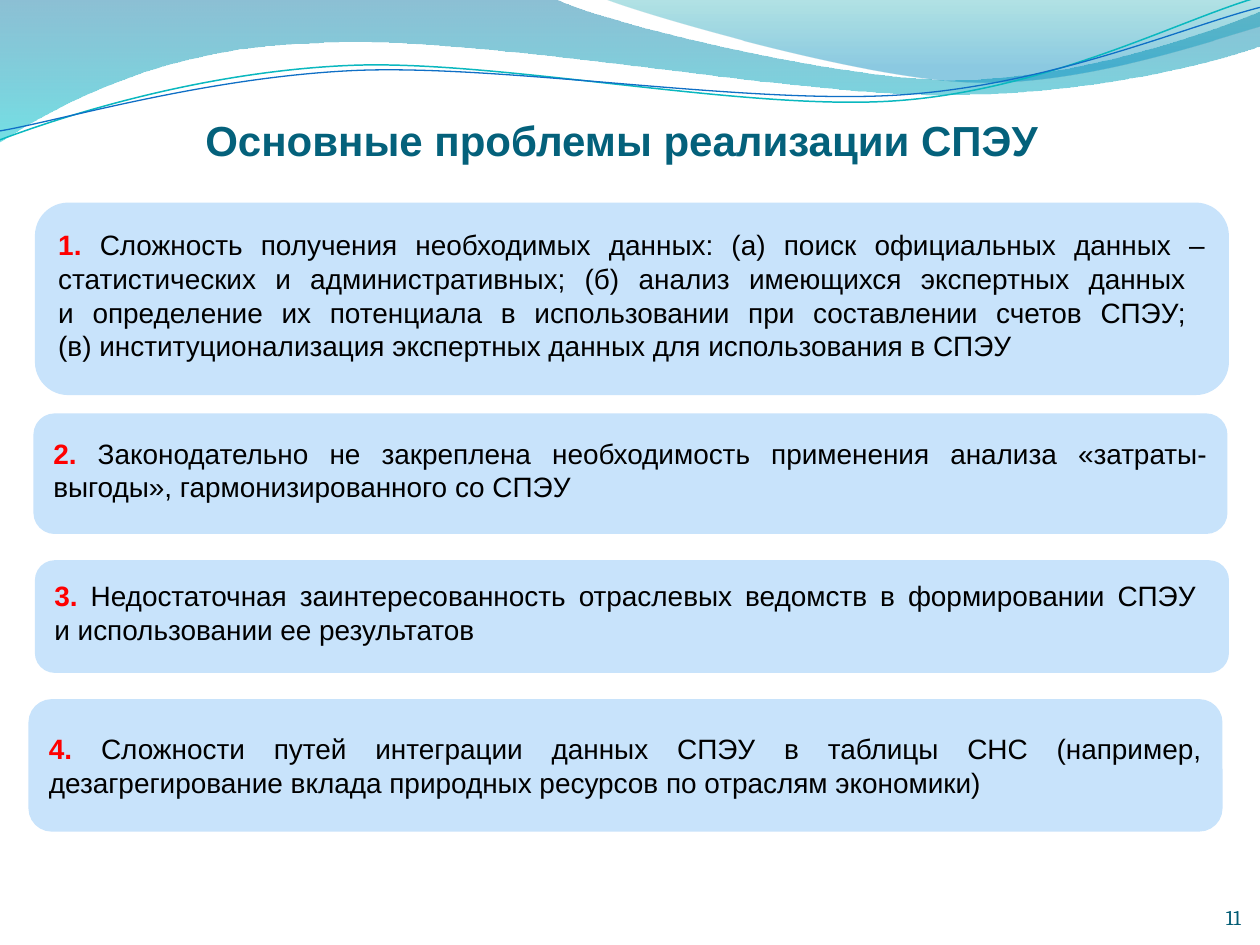
from lxml import etree
from pptx import Presentation
from pptx.dml.color import RGBColor
from pptx.enum.shapes import MSO_SHAPE
from pptx.enum.text import MSO_ANCHOR, MSO_AUTO_SIZE, PP_ALIGN
from pptx.oxml.ns import qn
from pptx.util import Cm, Pt

ROUNDED = MSO_SHAPE.ROUNDED_RECTANGLE
MIDDLE, BOTTOM = MSO_ANCHOR.MIDDLE, MSO_ANCHOR.BOTTOM
CENTER, RIGHT, JUSTIFY = PP_ALIGN.CENTER, PP_ALIGN.RIGHT, PP_ALIGN.JUSTIFY
NO_AUTOFIT = MSO_AUTO_SIZE.NONE
TITLE_ONLY_LAYOUT = 5
CARD_WIDTH = 24

COLORS = {
    "title": "04617B",
    "page": "045D75",
    "card": "C8E3FB",
    "number": "FF0000",
    "text": "000000",
    "teal_line": "0AB8BF",
    "blue_line": "0F6FC6",
    "deep_blue": "0074A1",
    "cyan": "00C6CF",
    "teal": "00A1A9",
    "blue": "008BBF",
}

LEFT_WAVE = [
    [(0, 0)], [(11.18, -0.03)],
    [(12.09, 0.43), (16.87, 1.6), (19.25, 1.6)],
    [(21.67, 1.6), (24.33, 0.66), (25.4, 0.23)],
    [(25.43, 0.91)],
    [(24.97, 1.12), (22.1, 1.93), (18.95, 1.91)],
    [(15.8, 1.91), (9.7, 0.71), (6.53, 0.86)],
    [(3.28, 0.91), (1.17, 2.11), (-0.03, 2.87)],
]
RIGHT_WAVE = [
    [(12.17, -0.03)],
    [(12.93, 0.28), (17.32, 1.57), (19.53, 1.65)],
    [(21.74, 1.75), (24.41, 0.81), (25.4, 0.53)],
    [(25.4, 0)],
]
TEAL_CURVE = [
    [(0, 2.82)],
    [(1.22, 2.36), (4.01, 1.45), (7.04, 1.32)],
    [(10.03, 1.19), (15.06, 2.26), (18.11, 2.03)],
    [(21.16, 1.8), (23.83, 0.38), (25.35, -0.05)],
]
BLUE_CURVE = [
    [(0, 2.64)],
    [(1.19, 2.44), (4.17, 1.55), (7.19, 1.42)],
    [(10.24, 1.3), (15.16, 2.13), (18.21, 1.91)],
    [(21.23, 1.7), (23.9, 0.53), (25.4, 0.15)],
]

PROBLEMS = [
    (0.74, 4.12, 3.81, 0.28,
     "Сложность получения необходимых данных: (а) поиск официальных данных – "
     "статистических и административных; (б) анализ имеющихся экспертных данных \n"
     "и определение их потенциала в использовании при составлении счетов СПЭУ; \n"
     "(в) институционализация экспертных данных для использования в СПЭУ"),
    (0.71, 8.37, 2.36, 0.29,
     "Законодательно не закреплена необходимость применения анализа "
     "«затраты-выгоды», гармонизированного со СПЭУ"),
    (0.74, 11.33, 2.2, 0.29,
     "Недостаточная заинтересованность отраслевых ведомств в формировании СПЭУ \n"
     "и использовании ее результатов"),
    (0.61, 14.13, 2.6, 0.13,
     "Сложности путей интеграции данных СПЭУ в таблицы СНС (например, "
     "дезагрегирование вклада природных ресурсов по отраслям экономики)"),
]


def rgb(name):
    return RGBColor.from_string(COLORS[name])


def set_font(font, name, size, color, bold=False):
    font.name, font.size, font.bold = name, Pt(size), bold
    font.color.rgb = rgb(color)


def set_frame(frame, anchor, margins):
    frame.word_wrap = True
    frame.auto_size = NO_AUTOFIT
    frame.vertical_anchor = anchor
    (frame.margin_left, frame.margin_top,
     frame.margin_right, frame.margin_bottom) = [Cm(margin) for margin in margins]


def place(shape, left, top, width, height):
    shape.left, shape.top = Cm(left), Cm(top)
    shape.width, shape.height = Cm(width), Cm(height)


def add_outline(slide, segments, close):
    start, *ends = [(Cm(x), Cm(y)) for x, y in (segment[-1] for segment in segments)]
    builder = slide.shapes.build_freeform(*start)
    builder.add_line_segments(ends, close=close)
    shape = builder.convert_to_shape()
    shape.shadow.inherit = False
    lines = list(shape._element.iter(qn("a:lnTo")))
    for line, segment in zip(lines, segments[1:]):
        if len(segment) == 3:
            bend_line(shape, line, segment[:2])
    return shape


def bend_line(shape, line, controls):
    line.tag = qn("a:cubicBezTo")
    for index, (x, y) in enumerate(controls):
        point = etree.Element(qn("a:pt"))
        point.set("x", str(Cm(x) - shape.left))
        point.set("y", str(Cm(y) - shape.top))
        line.insert(index, point)


def add_wave(slide, segments, stops):
    shape = add_outline(slide, segments, True)
    shape.line.fill.background()
    shape.fill.gradient()
    shape.fill.gradient_angle = 270
    for stop, (position, color, opacity) in zip(shape.fill.gradient_stops, stops):
        stop.position = position
        stop.color.rgb = rgb(color)
    color_elements = shape._element.spPr.iter(qn("a:srgbClr"))
    for element, (position, color, opacity) in zip(color_elements, stops):
        etree.SubElement(element, qn("a:alpha")).set("val", str(opacity * 1000))


def add_curve(slide, segments, color, width):
    shape = add_outline(slide, segments, False)
    shape.fill.background()
    shape.line.color.rgb = rgb(color)
    shape.line.width = Pt(width)


def add_title(slide, text):
    title = slide.shapes.title
    slide.shapes._spTree.append(title._element)
    place(title, 1.1, 1.73, 22.86, 1.6)
    set_frame(title.text_frame, BOTTOM, (0, 0.13, 0, 0))
    paragraph = title.text_frame.paragraphs[0]
    paragraph.text = text
    paragraph.alignment = CENTER
    set_font(paragraph.font, "Arial", 24, "title", True)


def add_card(slide, number, left, top, height, bottom_margin, text):
    card = slide.shapes.add_shape(ROUNDED, Cm(left), Cm(top), Cm(CARD_WIDTH), Cm(height))
    card.shadow.inherit = False
    card.fill.solid()
    card.fill.fore_color.rgb = rgb("card")
    card.line.color.rgb = rgb("card")
    card.line.width = Pt(2)
    set_frame(card.text_frame, MIDDLE, (0.25, 0.13, 0.25, bottom_margin))
    paragraph = card.text_frame.paragraphs[0]
    paragraph.alignment = JUSTIFY
    run = paragraph.add_run()
    run.text = f"{number}."
    set_font(run.font, "Arial", 16, "number", True)
    for index, line in enumerate(f" {text}".split("\n")):
        if index:
            paragraph.add_line_break()
        run = paragraph.add_run()
        run.text = line
        set_font(run.font, "Arial", 16, "text")


def add_page_number(slide, text):
    box = slide.shapes.add_textbox(Cm(22.91), Cm(17.73), Cm(2.11), Cm(1.02))
    set_frame(box.text_frame, BOTTOM, (0, 0, 0, 0))
    paragraph = box.text_frame.paragraphs[0]
    paragraph.text = text
    paragraph.alignment = RIGHT
    set_font(paragraph.font, "Cambria", 12, "page")


def main():
    presentation = Presentation()
    presentation.slide_width, presentation.slide_height = Cm(25.4), Cm(19.05)
    slide = presentation.slides.add_slide(presentation.slide_layouts[TITLE_ONLY_LAYOUT])
    add_wave(slide, LEFT_WAVE, [(0, "deep_blue", 45), (1, "cyan", 55)])
    add_wave(slide, RIGHT_WAVE, [(0, "teal", 30), (0.8, "blue", 45)])
    add_curve(slide, TEAL_CURVE, "teal_line", 0.85)
    add_curve(slide, BLUE_CURVE, "blue_line", 0.75)
    add_title(slide, "Основные проблемы реализации СПЭУ")
    for number, problem in enumerate(PROBLEMS, 1):
        add_card(slide, number, *problem)
    add_page_number(slide, "11")
    presentation.save("out.pptx")


if __name__ == "__main__":
    main()
